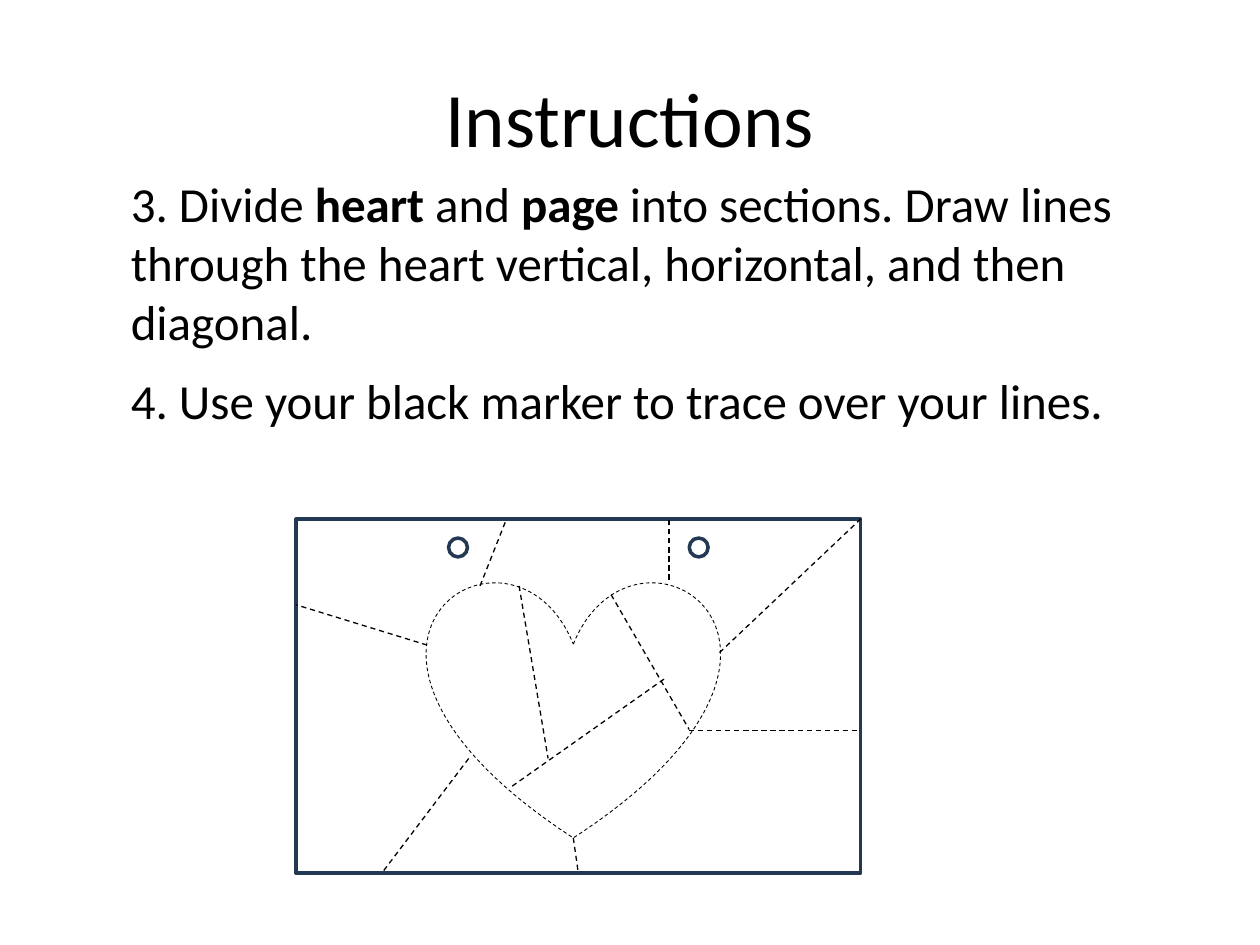
from lxml.etree import SubElement
from pptx import Presentation
from pptx.dml.color import RGBColor
from pptx.enum.dml import MSO_LINE
from pptx.enum.shapes import MSO_CONNECTOR, MSO_SHAPE
from pptx.enum.text import MSO_ANCHOR, PP_ALIGN
from pptx.oxml.ns import qn
from pptx.util import Inches, Pt

BLACK = "000000"
WHITE = "FFFFFF"
NAVY = "233953"

presentation = Presentation()
presentation.slide_width = Inches(10)
presentation.slide_height = Inches(7.5)
slide = presentation.slides.add_slide(presentation.slide_layouts[6])
column = presentation.slide_width / 100
row = presentation.slide_height / 75


def cells(left, top, width, height):
    return [round(left * column), round(top * row), round(width * column), round(height * row)]


def paint(color_format, color):
    color_format.rgb = RGBColor.from_string(color)


title = slide.shapes.add_textbox(*cells(5, 3, 90, 12.5))
title.text_frame.word_wrap = True
title.text_frame.vertical_anchor = MSO_ANCHOR.MIDDLE
title.text_frame.text = "Instructions"
title.text_frame.paragraphs[0].alignment = PP_ALIGN.CENTER

body = slide.shapes.add_textbox(*cells(5, 13.3, 90, 60))
body.text_frame.word_wrap = True
steps = [
    ["3. Divide ", "heart", " and ", "page",
     " into sections. Draw lines through the heart vertical, horizontal, and then diagonal."],
    ["4. Use your black marker to trace over your lines."],
]
for index, pieces in enumerate(steps):
    paragraph = body.text_frame.paragraphs[0] if index == 0 else body.text_frame.add_paragraph()
    properties = paragraph._p.get_or_add_pPr()
    properties.set("marL", str(Inches(0.44)))
    properties.set("indent", "0")
    paragraph.space_before = Pt(5.6 if index else 0)
    paragraph.space_after = Pt(6)
    for position, piece in enumerate(pieces):
        run = paragraph.add_run()
        run.text = piece
        run.font.bold = position % 2 == 1

for box, size in [(title, 44), (body, 28)]:
    for paragraph in box.text_frame.paragraphs:
        for run in paragraph.runs:
            run.font.size = Pt(size)
            run.font.name = "Calibri"
            paint(run.font.color, BLACK)

page_left, page_top, page_width, page_height = 23.5, 41.2, 44.8, 28.1
page_right = page_left + page_width
page_bottom = page_top + page_height
heart_left, heart_top, heart_width, heart_height = 33.9, 46, 23.2, 20.5
heart_right = heart_left + heart_width
heart_tip = heart_left + heart_width / 2
heart_bottom = heart_top + heart_height

outlines = [
    (MSO_SHAPE.RECTANGLE, (page_left, page_top, page_width, page_height), NAVY, 2, MSO_LINE.SOLID),
    (MSO_SHAPE.OVAL, (35.6, 42.7, 1.5, 1.5), NAVY, 2, MSO_LINE.SOLID),
    (MSO_SHAPE.OVAL, (54.7, 42.7, 1.5, 1.5), NAVY, 2, MSO_LINE.SOLID),
    (MSO_SHAPE.HEART, (heart_left, heart_top, heart_width, heart_height), BLACK, 0.5, MSO_LINE.DASH),
]
for preset, place, color, weight, dash in outlines:
    shape = slide.shapes.add_shape(preset, *cells(*place))
    shape.shadow.inherit = False
    shape.fill.solid()
    paint(shape.fill.fore_color, WHITE)
    paint(shape.line.color, color)
    shape.line.width = Pt(weight)
    shape.line.dash_style = dash

section_lines = [
    (52.7, 53.9, 40.5, 62.5),
    (54.7, 58, page_right, 58),
    (48.5, 47.2, 54.7, 57.9),
    (41.2, 46.5, 43.5, 60.2),
    (heart_right, 51.8, page_right, page_top),
    (38.1, 46.5, 40.2, page_top),
    (53.1, heart_top, 53.1, page_top),
    (heart_left, 51.2, page_left, 48),
    (37.2, 60.2, 30.3, page_bottom),
    (heart_tip, heart_bottom, 45.9, page_bottom),
]
for ends in section_lines:
    connector = slide.shapes.add_connector(MSO_CONNECTOR.STRAIGHT, *cells(*ends))
    paint(connector.line.color, BLACK)
    connector.line.width = Pt(0.75)
    connector.line.dash_style = MSO_LINE.DASH
    SubElement(connector._element.spPr, qn("a:effectLst"))

presentation.save("out.pptx")
